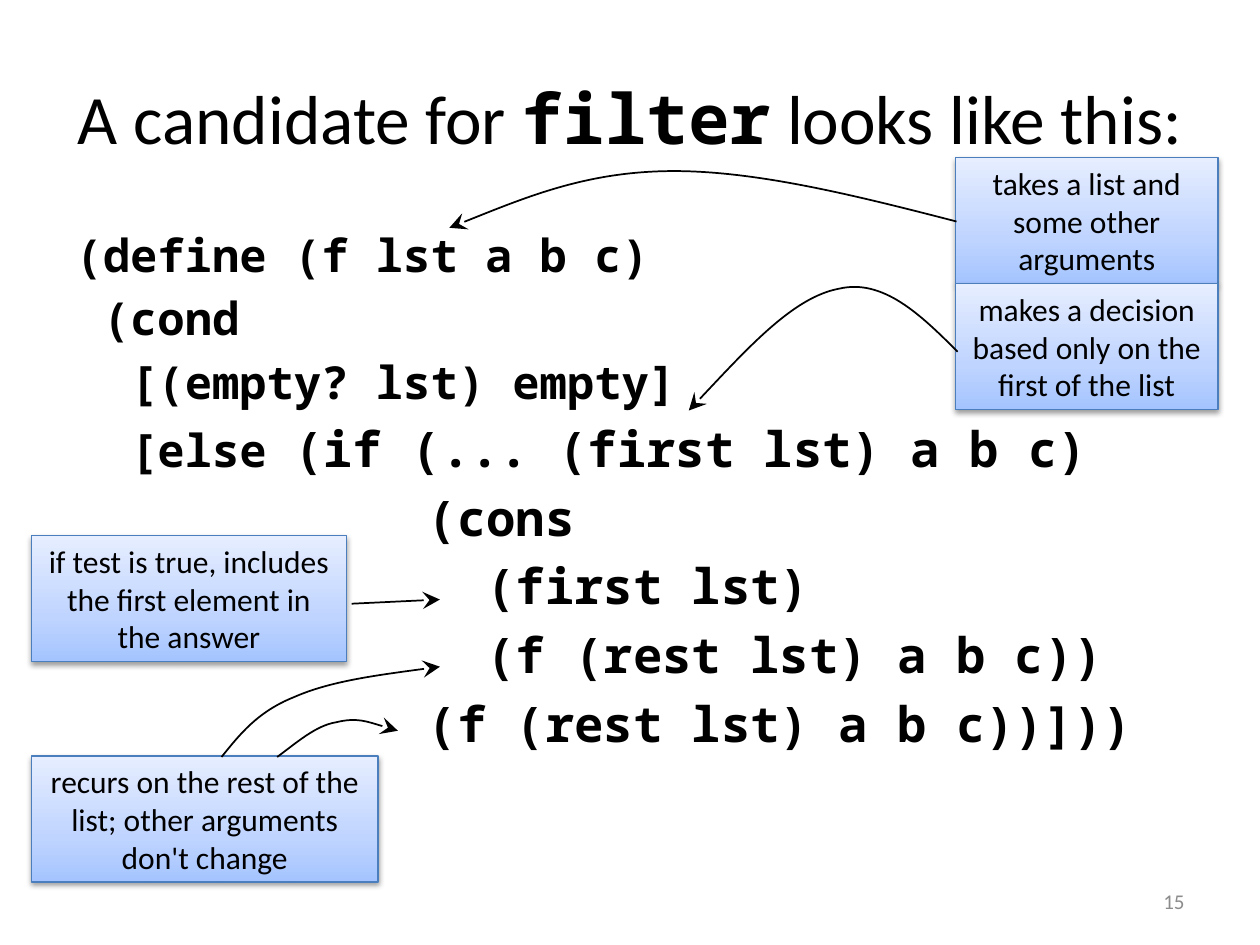
from copy import deepcopy
from dataclasses import dataclass

from lxml import etree
from pptx import Presentation
from pptx import util as u
from pptx.dml.color import RGBColor
from pptx.enum import shapes, text
from pptx.oxml.ns import qn


@dataclass(frozen=True)
class Theme:
    """Fonts, type sizes and colours of the slide."""
    sans: str = "Calibri"
    mono: str = "Noto Sans Mono"
    title: float = 39.6
    code: float = 26
    code_large: float = 28
    note: float = 18
    number: float = 12
    ink: str = "000000"
    muted: str = "8C8C8C"
    edge: str = "4B7EBC"
    gradient: tuple = ((0, "A4C4FF"), (0.35, "BFD4FF"), (1, "E6EEFF"))


THEME = Theme()
CELL = u.Inches(10) // 120

CODE = [
    [("(define (f lst a b c)", THEME.code)],
    [(" (cond", THEME.code)],
    [("  [(empty? lst) empty]", THEME.code)],
    [("  [else ", THEME.code), ("(if (... (first lst) a b c)", THEME.code_large)],
    [("            (cons", THEME.code_large)],
    [("              (first lst)", THEME.code_large)],
    [("              (f (rest lst) a b c))", THEME.code_large)],
    [("            (f (rest lst) a b c))]))", THEME.code_large)],
]

NOTES = [
    ((91, 15, 25, 12), "takes a list and some other arguments"),
    ((3, 72, 33, 12), "recurs on the rest of the list; other arguments don't change"),
    ((91, 27, 25, 12), "makes a decision based only on the first of the list"),
    ((3, 51, 30, 12), "if test is true, includes the first element in the answer"),
]

CURVES = [
    [(91.1, 21.1), (81.4, 18.6), (71.8, 16.2), (63.7, 16.3),
     (55.8, 16.4), (49.3, 19.1), (42.8, 21.7)],
    [(91.2, 33.5), (87.7, 30), (84.1, 26.5), (79.9, 27.5),
     (75.6, 28.3), (70.7, 33.7), (65.6, 39.1)],
    [(21.1, 72.1), (22.8, 70), (24.5, 67.8), (28, 66.4),
     (31.4, 64.9), (36.6, 64.2), (41.9, 63.5)],
    [(26.4, 72.1), (28.3, 70.7), (30.1, 69.1), (32, 68.8),
     (34, 68.3), (35.9, 69), (37.9, 69.6)],
]


def cells(*values):
    """Turn grid cells into lengths."""
    return [u.Emu(round(v * CELL)) for v in values]


def place(sp, box):
    """Move a shape to a box of grid cells."""
    sp.left, sp.top, sp.width, sp.height = cells(*box)


def add_run(p, words, size, font=THEME.sans, bold=False, color=THEME.ink):
    """Add one formatted run to a paragraph."""
    r = p.add_run()
    r.text = words
    r.font.name, r.font.size, r.font.bold = font, u.Pt(size), bold
    r.font.color.rgb = RGBColor.from_string(color)


def fill_title(sp):
    """Write the heading with its function name in code type."""
    place(sp, (6, 3.6, 108, 15))
    tf = sp.text_frame
    tf.auto_size = text.MSO_AUTO_SIZE.NONE
    p = tf.paragraphs[0]
    add_run(p, "A candidate for ", THEME.title)
    add_run(p, "filter", THEME.title, THEME.mono, True)
    add_run(p, " looks like this:", THEME.title)


def fill_code(sp):
    """Write the code lines as paragraphs without bullets."""
    place(sp, (6, 21, 108, 59.4))
    tf = sp.text_frame
    tf.auto_size = text.MSO_AUTO_SIZE.NONE
    for i, line in enumerate(CODE):
        p = tf.paragraphs[0] if i == 0 else tf.add_paragraph()
        etree.SubElement(p._p.get_or_add_pPr(), qn("a:buNone"))
        for words, size in line:
            add_run(p, words, size, THEME.mono, True)


def add_shadow(sp):
    """Give a shape a soft shadow below it."""
    sp.shadow.inherit = False
    effects = sp._element.spPr.find(qn("a:effectLst"))
    shadow = etree.SubElement(effects, qn("a:outerShdw"), blurRad="40000",
                              dist="20000", dir="5400000", rotWithShape="0")
    color = etree.SubElement(shadow, qn("a:srgbClr"), val=THEME.ink)
    etree.SubElement(color, qn("a:alpha"), val="38000")


def add_note(s, box, words):
    """Add a gradient box with a centred remark."""
    sp = s.shapes.add_shape(shapes.MSO_SHAPE.RECTANGLE, *cells(*box))
    sp.fill.gradient()
    sp.fill.gradient_angle = 90
    stops = sp._element.spPr.find(".//" + qn("a:gsLst"))
    stops.append(deepcopy(stops[0]))
    for stop, (position, color) in zip(sp.fill.gradient_stops, THEME.gradient):
        stop.position = position
        stop.color.rgb = RGBColor.from_string(color)
    sp.line.color.rgb = RGBColor.from_string(THEME.edge)
    sp.line.width = u.Pt(0.75)
    add_shadow(sp)
    tf = sp.text_frame
    tf.word_wrap = True
    tf.vertical_anchor = text.MSO_ANCHOR.MIDDLE
    p = tf.paragraphs[0]
    p.alignment = text.PP_ALIGN.CENTER
    add_run(p, words, THEME.note)


def style_arrow(sp):
    """Draw a thin line with a large stealth head at its end."""
    sp.line.color.rgb = RGBColor.from_string(THEME.ink)
    sp.line.width = u.Pt(1)
    etree.SubElement(sp.line._get_or_add_ln(), qn("a:tailEnd"),
                     type="stealth", w="lg", len="lg")
    etree.SubElement(sp._element.spPr, qn("a:effectLst"))


def add_curve(s, points):
    """Add an arrow along cubic curves, three points to a curve."""
    start, *rest = [cells(*point) for point in points]
    builder = s.shapes.build_freeform(*start)
    builder.add_line_segments(rest, close=False)
    sp = builder.convert_to_shape()
    sp.fill.background()
    outline = sp._element.spPr.find(".//" + qn("a:path"))
    segments = outline.findall(qn("a:lnTo"))
    for i in range(0, len(segments), 3):
        curve = etree.SubElement(outline, qn("a:cubicBezTo"))
        for segment in segments[i:i + 3]:
            curve.append(segment[0])
            outline.remove(segment)
    style_arrow(sp)


def add_arrow(s, *ends):
    """Add a straight arrow between two grid points."""
    style_arrow(s.shapes.add_connector(shapes.MSO_CONNECTOR.STRAIGHT, *cells(*ends)))


def add_number(s, number):
    """Add the page number at the lower right."""
    tf = s.shapes.add_textbox(*cells(86, 83.4, 28, 4.8)).text_frame
    tf.word_wrap = True
    tf.vertical_anchor = text.MSO_ANCHOR.MIDDLE
    p = tf.paragraphs[0]
    p.alignment = text.PP_ALIGN.RIGHT
    add_run(p, number, THEME.number, color=THEME.muted)


def main():
    """Build the slide and save it."""
    prs = Presentation()
    prs.slide_width, prs.slide_height = cells(120, 90)
    s = prs.slides.add_slide(prs.slide_layouts[1])
    fill_title(s.shapes.title)
    fill_code(s.placeholders[1])
    for box, words in NOTES:
        add_note(s, box, words)
    for points in CURVES:
        add_curve(s, points)
    add_arrow(s, 33.5, 57.5, 41.9, 57.1)
    add_number(s, "15")
    prs.save("out.pptx")


if __name__ == "__main__":
    main()
